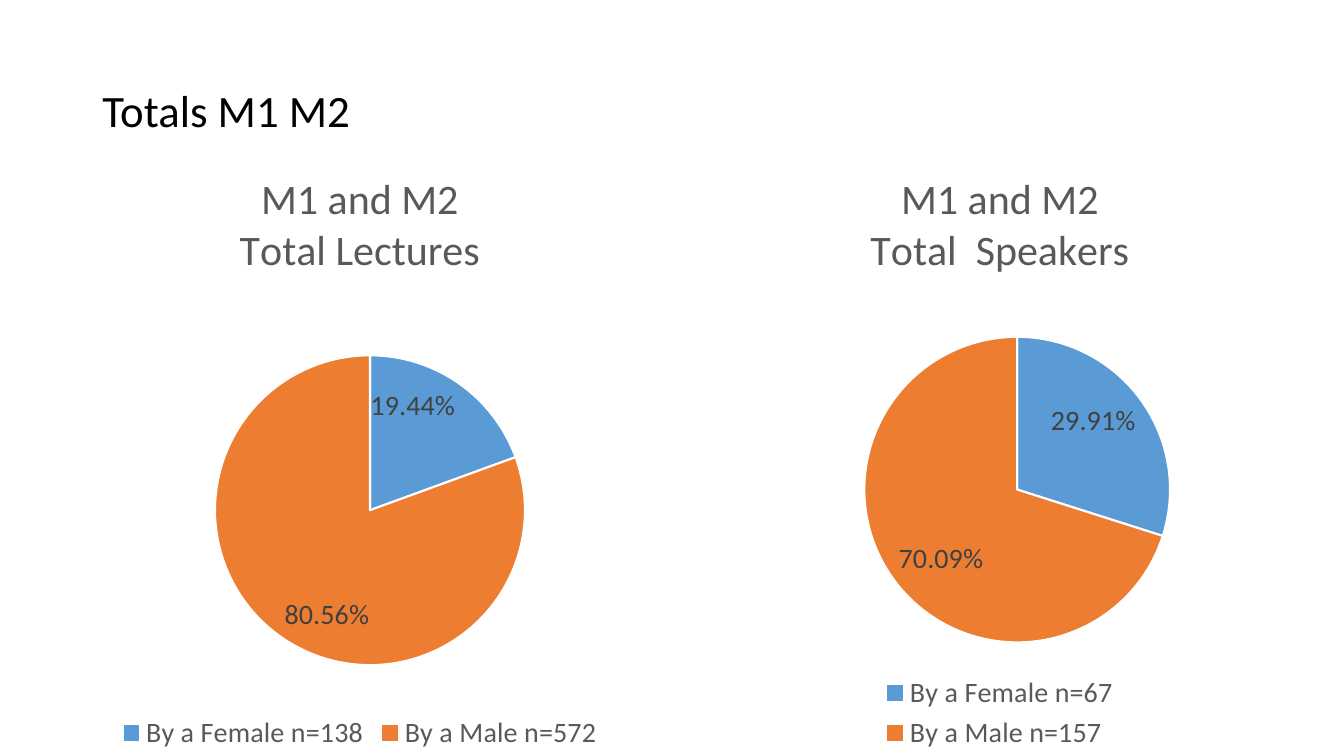
"""Build a slide with two pie charts of lecture and speaker totals."""
from dataclasses import dataclass

from lxml import etree
from pptx import Presentation
from pptx.chart.data import CategoryChartData
from pptx.dml.color import RGBColor
from pptx.enum.chart import XL_CHART_TYPE, XL_LABEL_POSITION, XL_LEGEND_POSITION
from pptx.enum.text import MSO_ANCHOR
from pptx.oxml.ns import qn
from pptx.util import Inches, Pt

PIE = XL_CHART_TYPE.PIE
BOTTOM = XL_LEGEND_POSITION.BOTTOM
INSIDE = XL_LABEL_POSITION.INSIDE_END
MIDDLE = MSO_ANCHOR.MIDDLE
WIDTH, HEIGHT = Inches(13.33), Inches(7.5)
COLS, ROWS = 160, 90


@dataclass(frozen=True)
class Theme:
    """Colours, font and type sizes."""
    font: str = "Calibri"
    ink: str = "000000"
    gray: str = "595959"
    dark: str = "404040"
    edge: str = "FFFFFF"
    slices: tuple[str, ...] = ("5B9BD5", "ED7D31")
    head: float = 32
    title: float = 30
    label: float = 20
    line: float = 1.5


@dataclass(frozen=True)
class Box:
    """A place in grid columns and rows."""
    left: float
    top: float
    width: float
    height: float

    def place(self) -> tuple[int, int, int, int]:
        """Return the place in slide units."""
        col, row = WIDTH / COLS, HEIGHT / ROWS
        return (round(self.left * col), round(self.top * row),
                round(self.width * col), round(self.height * row))


@dataclass(frozen=True)
class Panel:
    """One pie chart with its title, data and plot area."""
    title: str
    names: tuple[str, ...]
    shares: tuple[float, ...]
    box: Box
    plot: Box


THEME = Theme()
HEAD = Box(11, 4.8, 138, 17.4)
PANELS = (
    Panel("M1 and M2\nTotal Lectures",
          ("By a Female n=138", "By a Male n=572"), (0.1944, 0.8056),
          Box(9.36, 18.12, 66.96, 71.88), Box(25.6, 42.3, 36.9, 36.9)),
    Panel("M1 and M2\nTotal  Speakers",
          ("By a Female n=67", "By a Male n=157"), (0.2991, 0.7009),
          Box(89.04, 18.12, 60, 71.88), Box(102.9, 40.1, 36.4, 36.4)),
)


def style(font, *, size: float, color: str) -> None:
    """Set a font's face, size and colour."""
    font.name = THEME.font
    font.size = Pt(size)
    font.bold = False
    font.color.rgb = RGBColor.from_string(color)


def write(frame, text: str, *, size: float, color: str, space: float = 1) -> None:
    """Write each line of text as a formatted paragraph."""
    for i, line in enumerate(text.split("\n")):
        para = frame.add_paragraph() if i else frame.paragraphs[0]
        para.line_spacing = space
        run = para.add_run()
        run.text = line
        style(run.font, size=size, color=color)


def set_plot(chart, box: Box, plot: Box) -> None:
    """Fix the plot area inside the chart's box."""
    area = chart.element.find(".//" + qn("c:plotArea"))
    for old in area.findall(qn("c:layout")):
        area.remove(old)
    layout = etree.Element(qn("c:layout"))
    area.insert(0, layout)
    manual = etree.SubElement(layout, qn("c:manualLayout"))
    parts = {
        "layoutTarget": "inner", "xMode": "edge", "yMode": "edge",
        "x": (plot.left - box.left) / box.width,
        "y": (plot.top - box.top) / box.height,
        "w": plot.width / box.width,
        "h": plot.height / box.height,
    }
    for name, value in parts.items():
        etree.SubElement(manual, qn("c:" + name)).set("val", str(value))


def draw_pie(slide, panel: Panel) -> None:
    """Draw one panel as a pie chart."""
    data = CategoryChartData(number_format="0.00%")
    data.categories = panel.names
    data.add_series("Series 1", panel.shares)
    chart = slide.shapes.add_chart(PIE, *panel.box.place(), data).chart
    style(chart.font, size=THEME.label, color=THEME.gray)

    chart.has_title = True
    write(chart.chart_title.text_frame, panel.title,
          size=THEME.title, color=THEME.gray)
    chart.chart_title.include_in_layout = False

    chart.has_legend = True
    chart.legend.position = BOTTOM
    chart.legend.include_in_layout = False
    style(chart.legend.font, size=THEME.label, color=THEME.gray)

    plot = chart.plots[0]
    plot.vary_by_categories = True
    plot.has_data_labels = True
    labels = plot.data_labels
    labels.show_value = True
    labels.show_percentage = False
    labels.number_format = "0.00%"
    labels.number_format_is_linked = False
    labels.position = INSIDE
    style(labels.font, size=THEME.label, color=THEME.dark)

    for i, color in enumerate(THEME.slices):
        form = plot.series[0].points[i].format
        form.fill.solid()
        form.fill.fore_color.rgb = RGBColor.from_string(color)
        form.line.color.rgb = RGBColor.from_string(THEME.edge)
        form.line.width = Pt(THEME.line)
    set_plot(chart, panel.box, panel.plot)


def main() -> None:
    """Build and save the slide."""
    deck = Presentation()
    deck.slide_width, deck.slide_height = WIDTH, HEIGHT
    slide = deck.slides.add_slide(deck.slide_layouts[6])
    frame = slide.shapes.add_textbox(*HEAD.place()).text_frame
    frame.word_wrap = True
    frame.vertical_anchor = MIDDLE
    write(frame, "Totals M1 M2", size=THEME.head, color=THEME.ink, space=0.9)
    for panel in PANELS:
        draw_pie(slide, panel)
    deck.save("out.pptx")


if __name__ == "__main__":
    main()
